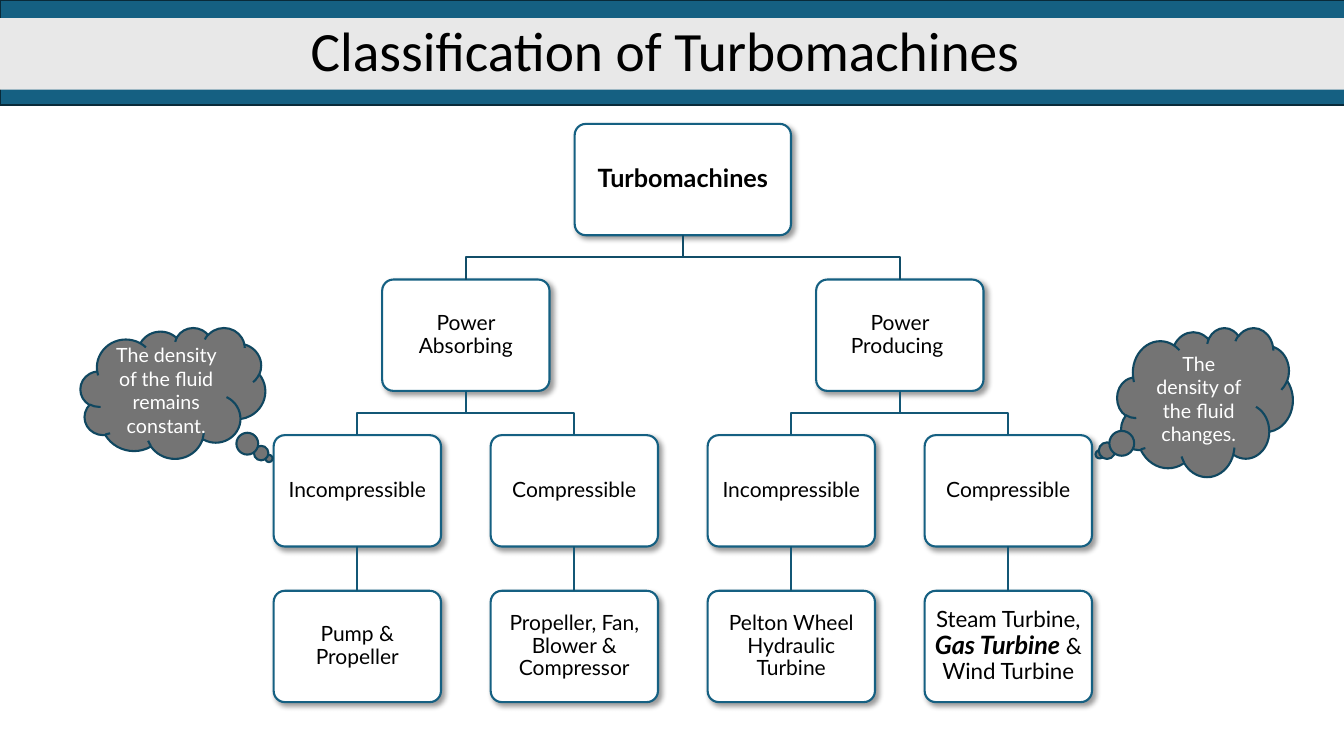
from lxml.etree import SubElement
from pptx import Presentation
from pptx.dml.color import RGBColor
from pptx.enum.shapes import MSO_CONNECTOR, MSO_SHAPE
from pptx.enum.text import MSO_ANCHOR, MSO_AUTO_SIZE, PP_ALIGN
from pptx.oxml.ns import qn
from pptx.util import Pt

COLORS = {
    "teal": "156082", "band_line": "092A39", "title_fill": "E8E8E8",
    "box": "FFFFFF", "trunk": "114D68", "branch": "135776",
    "cloud": "747474", "cloud_line": "104760",
    "dark": "000000", "light": "FFFFFF",
}
FAMILIES = [
    ("Power Absorbing", [
        ("Incompressible", "Pump & Propeller"),
        ("Compressible", "Propeller, Fan, Blower & Compressor"),
    ]),
    ("Power Producing ", [
        ("Incompressible", "Pelton Wheel Hydraulic Turbine"),
        ("Compressible", [
            ("Steam Turbine, ", {"size": 16}),
            ("Gas Turbine ", {"size": 18, "bold": True, "italic": True}),
            ("& Wind Turbine", {"size": 16}),
        ]),
    ]),
]


def color(name):
    return RGBColor.from_string(COLORS[name])


def write(sp, text, size=15, font="Lato", fill="dark", bold=False,
          italic=False, spacing=0.9, inset=None):
    tf = sp.text_frame
    tf.word_wrap = True
    tf.auto_size = MSO_AUTO_SIZE.NONE
    tf.vertical_anchor = MSO_ANCHOR.MIDDLE
    if inset is not None:
        tf.margin_left = tf.margin_right = Pt(inset)
        tf.margin_top = tf.margin_bottom = Pt(inset)
    p = tf.paragraphs[0]
    p.alignment = PP_ALIGN.CENTER
    p.line_spacing = spacing
    base = {"size": size, "bold": bold, "italic": italic}
    for part, changes in [(text, {})] if isinstance(text, str) else text:
        style = {**base, **changes}
        r = p.add_run()
        r.text = part
        r.font.name = font
        r.font.size = Pt(style["size"])
        r.font.bold = style["bold"]
        r.font.italic = style["italic"]
        r.font.color.rgb = color(fill)


def add_shape(s, kind, left, top, width, height, fill, line):
    sp = s.shapes.add_shape(kind, Pt(left), Pt(top), Pt(width), Pt(height))
    sp.fill.solid()
    sp.fill.fore_color.rgb = color(fill)
    sp.line.color.rgb = color(line)
    sp.line.width = Pt(1.5)
    sp.shadow.inherit = False
    return sp


def add_header(s, left, top, width, height):
    add_shape(s, MSO_SHAPE.RECTANGLE, left, top, width, height, "teal", "band_line")
    title = s.shapes.title
    title.element.getparent().append(title.element)
    title.left, title.top = Pt(left - 6.5), Pt(top + 13)
    title.width, title.height = Pt(width + 6.5), Pt(height - 24)
    title.fill.solid()
    title.fill.fore_color.rgb = color("title_fill")
    write(title, "Classification of Turbomachines ", size=39.6, font="Calibri")


def add_box(s, center, top, width, height, text, **style):
    sp = add_shape(s, MSO_SHAPE.ROUNDED_RECTANGLE, center - width / 2, top,
                   width, height, "box", "teal")
    sp.adjustments[0] = 0.1
    effects = sp.element.spPr.find(qn("a:effectLst"))
    shadow = SubElement(effects, qn("a:outerShdw"), blurRad=str(Pt(4)),
                        dist=str(Pt(3)), dir="2700000", algn="tl", rotWithShape="0")
    tint = SubElement(shadow, qn("a:srgbClr"), val=COLORS["dark"])
    SubElement(tint, qn("a:alpha"), val="40000")
    write(sp, text, **{"inset": 4.5, **style})
    return sp


def add_branch(s, start, end, line):
    x1, y1 = start.left + start.width // 2, start.top + start.height
    x2, y2 = end.left + end.width // 2, end.top
    middle = (y1 + y2) // 2
    builder = s.shapes.build_freeform(x1, y1, scale=1.0)
    builder.add_line_segments([(x1, middle), (x2, middle), (x2, y2)], close=False)
    sp = builder.convert_to_shape()
    sp.fill.background()
    sp.line.color.rgb = color(line)
    sp.line.width = Pt(1.5)
    sp.shadow.inherit = False


def add_link(s, start, end):
    c = s.shapes.add_connector(MSO_CONNECTOR.STRAIGHT, 0, 0, 0, 0)
    c.begin_connect(start, 2)
    c.end_connect(end, 0)
    c.line.color.rgb = color("branch")
    c.line.width = Pt(1.5)
    SubElement(c.element.spPr, qn("a:effectLst"))


def add_tree(s, left, top, width, height):
    box_w, box_h, root_w = 119.5, 79.5, 154.5
    step_x, step_y = (width - box_w) / 3, (height - box_h) / 3
    rows = [top + step_y * i for i in range(4)]
    columns = [left + box_w / 2 + step_x * i for i in range(4)]
    root = add_box(s, left + width / 2, rows[0], root_w, box_h, "Turbomachines",
                   size=18, bold=True, inset=5)
    for i, (family, flows) in enumerate(FAMILIES):
        pair = columns[2 * i:2 * i + 2]
        parent = add_box(s, sum(pair) / 2, rows[1], box_w, box_h, family)
        add_branch(s, root, parent, "trunk")
        for x, (flow, machines) in zip(pair, flows):
            child = add_box(s, x, rows[2], box_w, box_h, flow)
            leaf = add_box(s, x, rows[3], box_w, box_h, machines)
            add_branch(s, parent, child, "branch")
            add_link(s, child, leaf)


def add_cloud(s, left, top, width, height, text, tail):
    sp = add_shape(s, MSO_SHAPE.CLOUD_CALLOUT, left, top, width, height,
                   "cloud", "cloud_line")
    sp.adjustments[0], sp.adjustments[1] = tail
    write(sp, text, size=14, fill="light", spacing=1.0)


def main():
    prs = Presentation()
    prs.slide_width, prs.slide_height = Pt(960), Pt(540)
    s = prs.slides.add_slide(prs.slide_layouts[5])
    add_header(s, 0, 0, 965.5, 75)
    add_tree(s, 195.5, 88.5, 584.5, 413)
    add_cloud(s, 798, 234, 125.5, 106.5, "The density of the fluid changes.",
              (-0.6, 0.35))
    add_cloud(s, 57.5, 234, 132, 93.5, "The density of the fluid remains constant.",
              (0.52, 0.5))
    prs.save("out.pptx")


if __name__ == "__main__":
    main()
